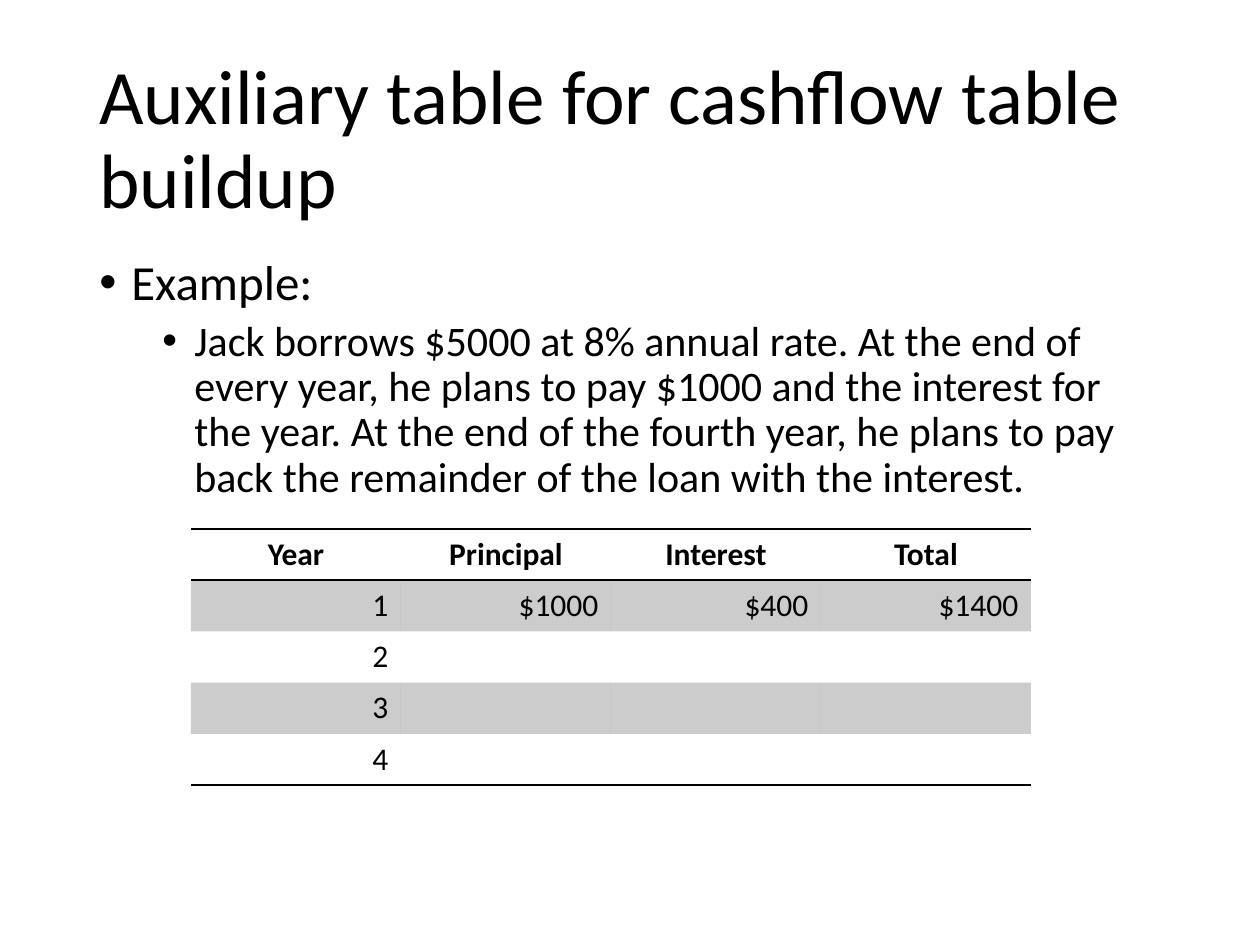
from lxml.etree import SubElement
from pptx import Presentation
from pptx.dml.color import RGBColor
from pptx.enum.text import MSO_ANCHOR, PP_ALIGN
from pptx.oxml.ns import qn
from pptx.util import Pt

PX = 914400 / 126
FONT = "Calibri"
COLORS = {"ink": "000000"}
BAND_ALPHA = 20
PLAIN_STYLE = "{2D5ABB26-0587-4C30-8999-92F81FD0307C}"

TITLE = "Auxiliary table for cashflow table buildup"
# text, size, left margin px, space before
POINTS = [
    ("Example:", 28, 32, 10),
    ("Jack borrows $5000 at 8% annual rate. At the end of every year, "
     "he plans to pay $1000 and the interest for the year. At the end of "
     "the fourth year, he plans to pay back the remainder of the loan "
     "with the interest.", 24, 95, 5),
]
ROWS = [
    ["Year", "Principal", "Interest", "Total"],
    ["1", "$1000", "$400", "$1400"],
    ["2", "", "", ""],
    ["3", "", "", ""],
    ["4", "", "", ""],
]


def px(n):
    return round(n * PX)


def style(font, size, bold=False):
    font.name = FONT
    font.size = Pt(size)
    font.bold = bold
    font.color.rgb = RGBColor.from_string(COLORS["ink"])


def add_frame(slide, box):
    frame = slide.shapes.add_textbox(*map(px, box)).text_frame
    frame.word_wrap = True
    return frame


def add_title(slide, box):
    frame = add_frame(slide, box)
    frame.vertical_anchor = MSO_ANCHOR.MIDDLE
    frame.text = TITLE
    para = frame.paragraphs[0]
    para.line_spacing = 0.9
    style(para.runs[0].font, 44)


def add_bullet(para, left, hang):
    props = para._p.get_or_add_pPr()
    props.set("marL", str(px(left)))
    props.set("indent", str(-px(hang)))
    SubElement(props, qn("a:buFont"), typeface="Arial")
    SubElement(props, qn("a:buChar"), char="•")


def add_body(slide, box):
    frame = add_frame(slide, box)
    frame.text = "\n".join(point[0] for point in POINTS)
    for para, (_, size, left, gap) in zip(frame.paragraphs, POINTS):
        para.line_spacing = 0.9
        para.space_before = Pt(gap)
        add_bullet(para, left, 32)
        style(para.runs[0].font, size)


def add_rule(cell, side):
    """Draw a 1 pt border on side T or B; call it before setting the fill."""
    line = SubElement(cell._tc.get_or_add_tcPr(), qn("a:ln" + side),
                      w=str(Pt(1)))
    fill = SubElement(line, qn("a:solidFill"))
    SubElement(fill, qn("a:srgbClr"), val=COLORS["ink"])


def fill_band(cell):
    cell.fill.solid()
    cell.fill.fore_color.rgb = RGBColor.from_string(COLORS["ink"])
    color = cell._tc.tcPr.find(qn("a:solidFill")).find(qn("a:srgbClr"))
    SubElement(color, qn("a:alpha"), val=str(BAND_ALPHA * 1000))


def fill_cell(cell, text, row):
    head = row == 0
    cell.text = text
    para = cell.text_frame.paragraphs[0]
    para.alignment = PP_ALIGN.CENTER if head else PP_ALIGN.RIGHT
    style(para.font, 18, head)
    for run in para.runs:
        style(run.font, 18, head)
    if head:
        add_rule(cell, "T")
    if head or row == len(ROWS) - 1:
        add_rule(cell, "B")
    if row % 2:
        fill_band(cell)
    else:
        cell.fill.background()


def add_grid(slide, box):
    frame = slide.shapes.add_table(len(ROWS), len(ROWS[0]), *map(px, box))
    table = frame.table
    table._tbl.tblPr.find(qn("a:tableStyleId")).text = PLAIN_STYLE
    table.horz_banding = False
    for r, row in enumerate(ROWS):
        for c, text in enumerate(row):
            fill_cell(table.cell(r, c), text, r)


def main():
    deck = Presentation()
    deck.slide_width, deck.slide_height = px(1260), px(945)
    slide = deck.slides.add_slide(deck.slide_layouts[6])
    add_title(slide, (87, 50, 1086, 183))
    add_body(slide, (87, 252, 1086, 600))
    add_grid(slide, (191, 529, 840, 256))
    deck.save("out.pptx")


if __name__ == "__main__":
    main()
